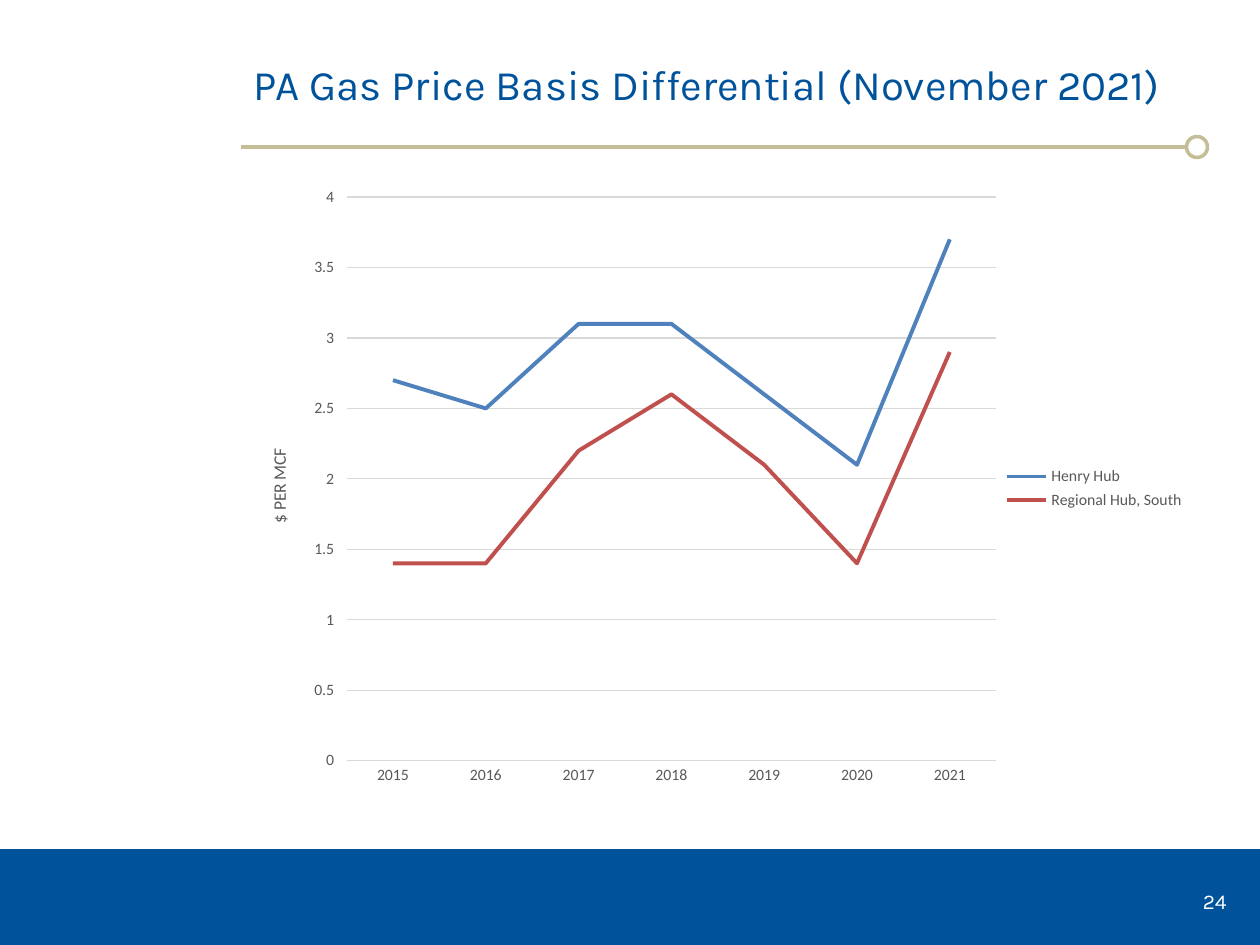
from lxml.etree import SubElement
from pptx import Presentation
from pptx.chart.data import CategoryChartData
from pptx.dml.color import RGBColor
from pptx.enum.chart import XL_CHART_TYPE, XL_LEGEND_POSITION, XL_MARKER_STYLE, XL_TICK_MARK
from pptx.enum.shapes import MSO_CONNECTOR, MSO_SHAPE
from pptx.enum.text import MSO_ANCHOR, PP_ALIGN
from pptx.oxml import parse_xml
from pptx.oxml.ns import nsdecls, qn
from pptx.util import Pt

TITLE = "PA Gas Price Basis Differential (November 2021)"
PAGE_NUMBER = "24"
AXIS_TITLE = "$ PER MCF"
YEARS = ["2015", "2016", "2017", "2018", "2019", "2020", "2021"]
PRICES = [
    ("Henry Hub", "4F81BD", [2.7, 2.5, 3.1, 3.1, 2.6, 2.1, 3.7]),
    ("Regional Hub, South", "C0504D", [1.4, 1.4, 2.2, 2.6, 2.1, 1.4, 2.9]),
]
BLUE, TAN, WHITE, GRAY, GRID = "00539B", "C4BD97", "FFFFFF", "595959", "D9D9D9"
WIDTH, HEIGHT = 720, 540
LEFT, RIGHT, RULE_Y = 138, 684, 84
FOOTER_HEIGHT, RING = 54, 12
PLOT_AREA = {"x": 0.11, "y": 0.03, "w": 0.68, "h": 0.91}


def color(value):
    return RGBColor.from_string(value)


def set_line(line, value, width):
    line.color.rgb = color(value)
    line.width = Pt(width)


def set_font(font, name, size, value):
    formats = {"name": name, "size": Pt(size), "bold": False}
    for attribute, setting in formats.items():
        setattr(font, attribute, setting)
    font.color.rgb = color(value)


def add_filled(slide, preset, box, fill, line):
    shape = slide.shapes.add_shape(preset, *map(Pt, box))
    shape.shadow.inherit = False
    shape.fill.solid()
    shape.fill.fore_color.rgb = color(fill)
    set_line(shape.line, line, 2)


def add_text(slide, text, box, size, value, formats):
    frame = slide.shapes.add_textbox(*map(Pt, box)).text_frame
    frame.word_wrap = True
    frame.vertical_anchor = MSO_ANCHOR.MIDDLE
    paragraph = frame.paragraphs[0]
    paragraph.text = text
    for attribute, setting in formats.items():
        setattr(paragraph, attribute, setting)
    set_font(paragraph.runs[0].font, "Karla", size, value)


def place_plot(chart):
    """Fix the inner plot area as fractions of the chart."""
    plot_area = chart.element.find(".//" + qn("c:plotArea"))
    for old in plot_area.findall(qn("c:layout")):
        plot_area.remove(old)
    layout = parse_xml(f"<c:layout {nsdecls('c')}/>")
    plot_area.insert(0, layout)
    manual = SubElement(layout, qn("c:manualLayout"))
    settings = {"layoutTarget": "inner", "xMode": "edge", "yMode": "edge", **PLOT_AREA}
    for tag, setting in settings.items():
        SubElement(manual, qn("c:" + tag)).set("val", str(setting))


def add_price_chart(slide, box):
    data = CategoryChartData()
    data.categories = YEARS
    for name, _, values in PRICES:
        data.add_series(name, values)
    chart = slide.shapes.add_chart(XL_CHART_TYPE.LINE, *map(Pt, box), data).chart
    set_font(chart.font, "Calibri", 9, GRAY)
    chart.has_title = False
    chart.has_legend = True
    chart.legend.position = XL_LEGEND_POSITION.RIGHT
    chart.legend.include_in_layout = False
    set_font(chart.legend.font, "Calibri", 9, GRAY)
    chart.plots[0].vary_by_categories = False
    for series, (_, value, _) in zip(chart.plots[0].series, PRICES):
        series.smooth = False
        series.marker.style = XL_MARKER_STYLE.NONE
        set_line(series.format.line, value, 2.25)

    years, prices = chart.category_axis, chart.value_axis
    for axis in (years, prices):
        set_font(axis.tick_labels.font, "Calibri", 9, GRAY)
    years.major_tick_mark = XL_TICK_MARK.NONE
    set_line(years.format.line, GRID, 0.75)
    prices.minimum_scale, prices.maximum_scale, prices.major_unit = 0, 4, 0.5
    prices.major_tick_mark = XL_TICK_MARK.OUTSIDE
    prices.format.line.fill.background()
    set_line(prices.major_gridlines.format.line, GRID, 0.75)
    frame = prices.axis_title.text_frame
    frame.text = AXIS_TITLE
    set_font(frame.paragraphs[0].runs[0].font, "Calibri", 10, GRAY)
    place_plot(chart)


def main():
    presentation = Presentation()
    presentation.slide_width, presentation.slide_height = Pt(WIDTH), Pt(HEIGHT)
    slide = presentation.slides.add_slide(presentation.slide_layouts[6])

    footer = (0, HEIGHT - FOOTER_HEIGHT, WIDTH, FOOTER_HEIGHT)
    add_filled(slide, MSO_SHAPE.RECTANGLE, footer, BLUE, BLUE)
    rule = slide.shapes.add_connector(
        MSO_CONNECTOR.STRAIGHT, Pt(LEFT), Pt(RULE_Y), Pt(RIGHT), Pt(RULE_Y))
    set_line(rule.line, TAN, 2.25)
    SubElement(rule.element.spPr, qn("a:effectLst"))
    ring = (RIGHT - RING / 2, RULE_Y - RING / 2, RING, RING)
    add_filled(slide, MSO_SHAPE.OVAL, ring, WHITE, TAN)

    add_text(slide, TITLE, (LEFT, 21.6, RIGHT - LEFT, 56), 24, BLUE,
             {"line_spacing": 0.9})
    add_text(slide, PAGE_NUMBER, (540, 500.4, 168, 28.8), 12, WHITE,
             {"alignment": PP_ALIGN.RIGHT, "space_after": Pt(6)})
    add_price_chart(slide, (LEFT, 102, RIGHT - LEFT, 354))
    presentation.save("out.pptx")


if __name__ == "__main__":
    main()
